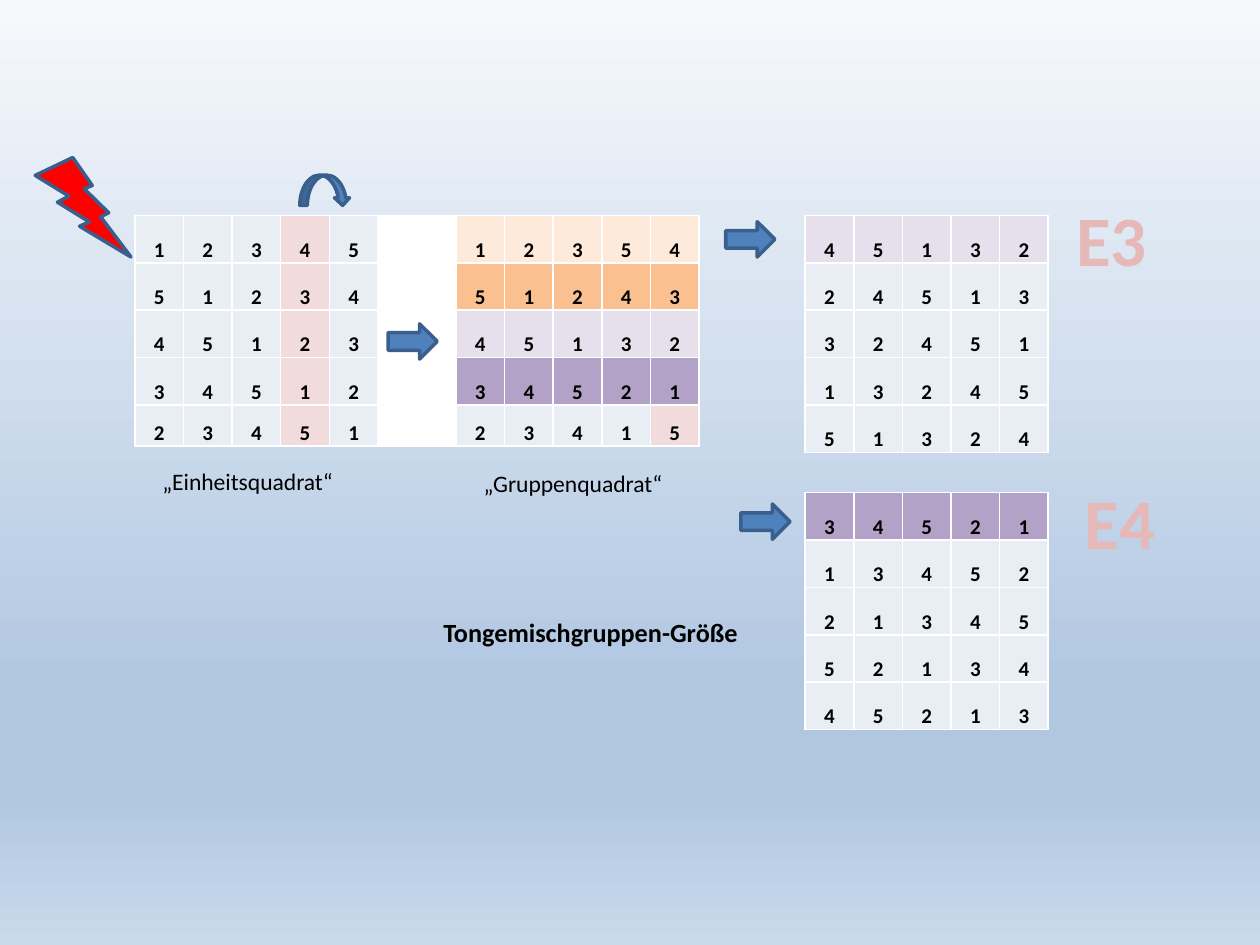
"""Build the slide on unit squares, group squares and tone mixture group sizes."""
from lxml.etree import SubElement
from pptx import Presentation
from pptx.dml.color import RGBColor as RGB
from pptx.enum.shapes import MSO_SHAPE as SHAPE
from pptx.enum.text import MSO_ANCHOR as ANCHOR, MSO_AUTO_SIZE as SIZE, PP_ALIGN as ALIGN
from pptx.oxml.ns import qn
from pptx.util import Inches, Pt

HUES = {
    "grey": "E9EDF4", "rose": "F2DCDB", "white": "FFFFFF", "cream": "FDEADA",
    "orange": "FAC090", "lilac": "E6E0EC", "purple": "B3A2C7", "black": "000000",
    "blue": "4F81BD", "edge": "3A5F8C", "red": "FF0000", "pink": "E6B9B8", "brick": "C0504D",
}
KEYS = {"g": "grey", "r": "rose", "w": "white", "c": "cream",
        "o": "orange", "l": "lilac", "p": "purple"}
SKY = [(0, "F6F9FC"), (74, "B0C6E1"), (83, "B0C6E1"), (100, "CAD9EB")]

COL, ROW, GAP = 1.93 / 5, 1.88 / 5, 0.62
LAST = 1.83 - 4 * ROW
LEFT, TOP, RIGHT, LOW = 1.07, 1.71, 6.39, 3.91
WIDE = [COL] * 5 + [GAP] + [COL] * 5

TABLES = [
    (LEFT, TOP, WIDE, [ROW] * 4 + [LAST], [
        ("12345 12354", "gggrgwccccc"),
        ("51234 51243", "gggrgwooooo"),
        ("45123 45132", "gggrgwlllll"),
        ("34512 34521", "gggrgwppppp"),
        ("23451 23415", "gggrgwggggr")]),
    (RIGHT, TOP, [COL] * 5, [ROW] * 5, [
        ("45132", "lllll"), ("24513", "ggggg"), ("32451", "ggggg"),
        ("13245", "ggggg"), ("51324", "ggggg")]),
    (RIGHT, LOW, [COL] * 5, [ROW] * 5, [
        ("34521", "ppppp"), ("13452", "ggggg"), ("21345", "ggggg"),
        ("52134", "ggggg"), ("45213", "ggggg")]),
]

ARROW = (0.39, 0.28)
SHAPES = [
    (SHAPE.CURVED_DOWN_ARROW, (2.38, 1.39, 0.4, 0.24), "blue"),
    (SHAPE.RIGHT_ARROW, (3.08, 2.57, *ARROW), "blue"),
    (SHAPE.RIGHT_ARROW, (5.76, 1.76, *ARROW), "blue"),
    (SHAPE.RIGHT_ARROW, (5.88, 4, *ARROW), "blue"),
    (SHAPE.LIGHTNING_BOLT, (0.28, 1.25, 0.76, 0.79), "red"),
]

PLAIN = {"size": Pt(13.5), "bold": False}
STRONG = {"size": Pt(15), "bold": True}
BIG = {"size": Pt(40.5), "bold": True}
DIGIT = {"size": Pt(12), "bold": True}
LABELS = [
    ("„Einheitsquadrat“", (1.19, 3.66, 1.79, 0.33), PLAIN, True),
    ("„Gruppenquadrat“", (3.74, 3.67, 1.79, 0.33), PLAIN, True),
    ("Tongemischgruppen-Größe", (3.42, 4.84, 2.56, 0.35), STRONG, False),
]
TITLES = [("E3", (8.46, 1.51, 0.72, 0.76)), ("E4", (8.53, 3.76, 0.72, 0.76))]


def hue(name):
    return RGB.from_string(HUES[name])


def inch(box):
    return [Inches(v) for v in box]


def style(font, form, name="black"):
    for key, val in {"name": "Calibri", **form}.items():
        setattr(font, key, val)
    font.color.rgb = hue(name)


def tint(node, code):
    SubElement(SubElement(node, qn("a:solidFill")), qn("a:srgbClr"), val=code)


def paint(slide):
    fill = slide.background.fill
    fill.gradient()
    fill.gradient_angle = 270
    stops = slide.element.find(".//" + qn("a:gsLst"))
    for stop in list(stops):
        stops.remove(stop)
    for pos, code in SKY:
        stop = SubElement(stops, qn("a:gs"), pos=str(pos * 1000))
        SubElement(stop, qn("a:srgbClr"), val=code)


def dress(cell, text, key):
    for side in ("left", "right", "top", "bottom"):
        setattr(cell, "margin_" + side, 0)
    cell.vertical_anchor = ANCHOR.BOTTOM
    para = cell.text_frame.paragraphs[0]
    para.text = text.strip()
    para.alignment = ALIGN.CENTER
    style(para.font, DIGIT)
    props = cell._tc.get_or_add_tcPr()
    for side in "LRTB":
        tint(SubElement(props, qn("a:ln" + side), w=str(Pt(1))), HUES["white"])
    cell.fill.solid()
    cell.fill.fore_color.rgb = hue(KEYS[key])


def add_grid(slide, left, top, cols, rows, data):
    box = inch((left, top, sum(cols), sum(rows)))
    table = slide.shapes.add_table(len(rows), len(cols), *box).table
    for parts, lengths, side in ((table.columns, cols, "width"), (table.rows, rows, "height")):
        for part, length in zip(parts, lengths):
            setattr(part, side, Inches(length))
    for r, (digits, keys) in enumerate(data):
        for c, (digit, key) in enumerate(zip(digits, keys)):
            dress(table.cell(r, c), digit, key)


def add_form(slide, kind, box, name):
    shape = slide.shapes.add_shape(kind, *inch(box))
    shape.shadow.inherit = False
    shape.fill.solid()
    shape.fill.fore_color.rgb = hue(name)
    shape.line.color.rgb = hue("edge")
    shape.line.width = Pt(2)


def add_text(slide, text, box, form, wrap, name="black"):
    frame = slide.shapes.add_textbox(*inch(box)).text_frame
    frame.word_wrap = wrap
    frame.auto_size = SIZE.SHAPE_TO_FIT_TEXT
    run = frame.paragraphs[0].add_run()
    run.text = text
    style(run.font, form, name)
    return frame


def add_title(slide, text, box):
    frame = add_text(slide, text, box, BIG, False, "pink")
    for side, gap in {"left": 0.07, "right": 0.07, "top": 0.04, "bottom": 0.04}.items():
        setattr(frame, "margin_" + side, Inches(gap))
    para = frame.paragraphs[0]
    para.alignment = ALIGN.CENTER
    props = para.runs[0]._r.get_or_add_rPr()
    line = SubElement(props, qn("a:ln"), w=str(Pt(1.75)))
    tint(line, HUES["brick"])
    props.insert(0, line)


def main():
    deck = Presentation()
    deck.slide_width, deck.slide_height = Inches(10), Inches(7.5)
    slide = deck.slides.add_slide(deck.slide_layouts[6])
    paint(slide)
    for maker, items in ((add_grid, TABLES), (add_form, SHAPES),
                         (add_text, LABELS), (add_title, TITLES)):
        for item in items:
            maker(slide, *item)
    deck.save("out.pptx")


if __name__ == "__main__":
    main()
